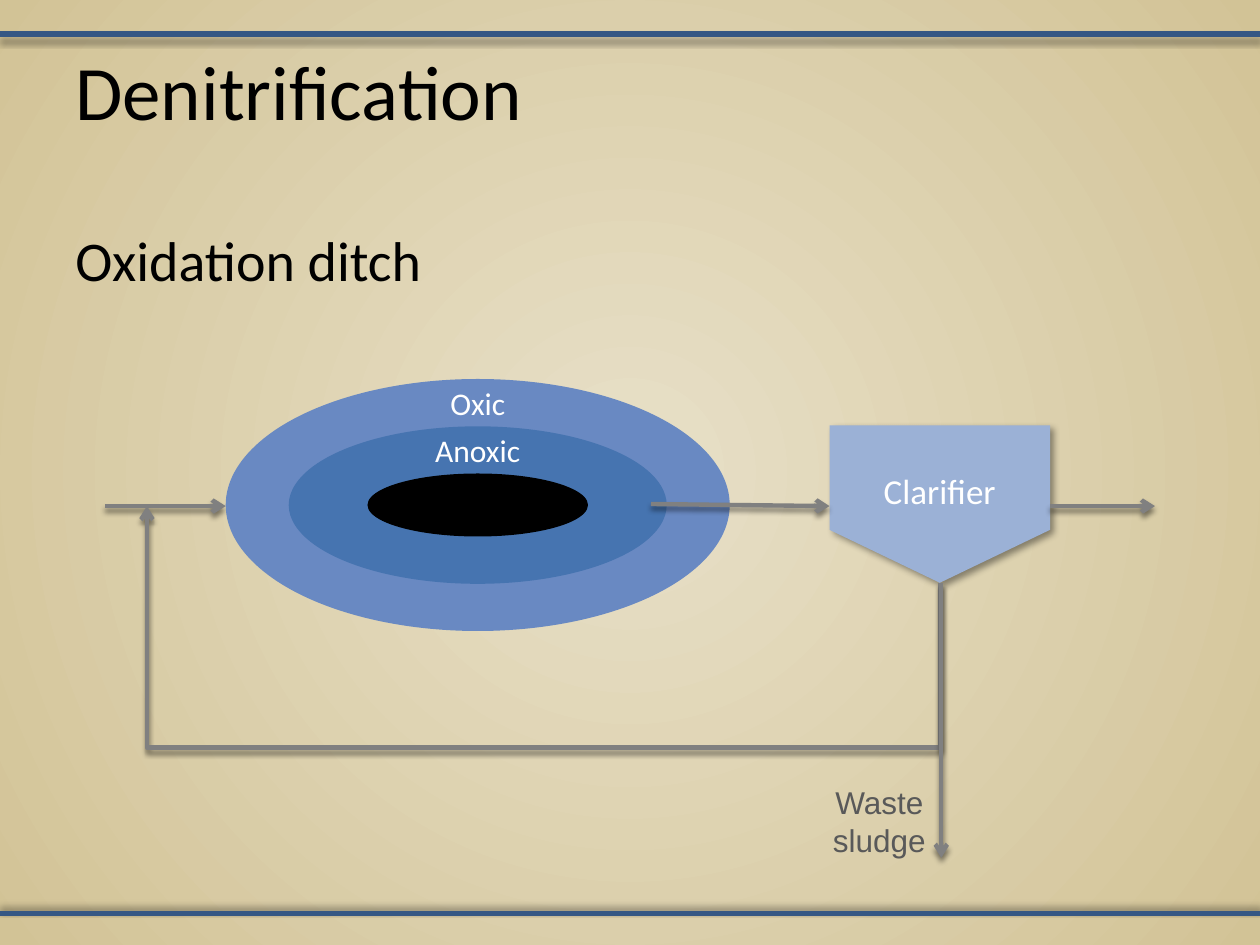
from pptx import Presentation
from pptx.dml.color import RGBColor
from pptx.enum.shapes import MSO_CONNECTOR, MSO_SHAPE
from pptx.enum.text import MSO_ANCHOR, PP_ALIGN
from pptx.oxml import parse_xml
from pptx.oxml.ns import nsdecls, qn
from pptx.util import Inches, Pt

COLS, ROWS = 120, 90
UNIT = Inches(10) / COLS
COLORS = {
    "glow": "E8E0C8", "sand": "D2C396", "rule": "355784", "pipe": "808080",
    "oxic": "6989C2", "anoxic": "4674B0", "core": "000000", "clarifier": "9BB1D6",
    "ink": "000000", "note": "595959", "light": "FFFFFF", "shade": "000000",
}
STRAIGHT, ELBOW = MSO_CONNECTOR.STRAIGHT, MSO_CONNECTOR.ELBOW
OVAL, PENTAGON = MSO_SHAPE.OVAL, MSO_SHAPE.PENTAGON
LEFT, CENTER, MIDDLE = PP_ALIGN.LEFT, PP_ALIGN.CENTER, MSO_ANCHOR.MIDDLE


def grid(*cells):
    """Turn grid cells into slide lengths."""
    return [round(cell * UNIT) for cell in cells]


def color(name):
    """Look up a named colour."""
    return RGBColor.from_string(COLORS[name])


def add_shadow(item, alpha, blur, distance, angle):
    """Give a shape or line a soft outer shadow."""
    props = item._element.spPr
    for old in props.findall(qn("a:effectLst")):
        props.remove(old)
    props.append(parse_xml(
        f'<a:effectLst {nsdecls("a")}><a:outerShdw blurRad="{Pt(blur)}" dist="{Pt(distance)}" '
        f'dir="{angle * 60000}" algn="ctr" rotWithShape="0"><a:srgbClr val="{COLORS["shade"]}">'
        f'<a:alpha val="{alpha * 1000}"/></a:srgbClr></a:outerShdw></a:effectLst>'))


def write(frame, text, size, name, font="Calibri", align=CENTER):
    """Fill a text frame and format all its runs."""
    frame.word_wrap = True
    frame.text = text
    for para in frame.paragraphs:
        para.alignment = align
        for span in para.runs:
            span.font.size, span.font.name = Pt(size), font
            span.font.color.rgb = color(name)


def add_text(page, box, *style, **options):
    """Place a text box on the grid."""
    frame = page.shapes.add_textbox(*grid(*box)).text_frame
    write(frame, *style, **options)
    return frame


def add_solid(page, kind, box, fill):
    """Place an unlined shape on the grid."""
    shape = page.shapes.add_shape(kind, *grid(*box))
    shape.shadow.inherit = False
    shape.fill.solid()
    shape.fill.fore_color.rgb = color(fill)
    shape.line.fill.background()
    return shape


def add_pipe(page, start, end, kind=STRAIGHT):
    """Draw a flow arrow between two grid points."""
    pipe = page.shapes.add_connector(kind, *grid(*start, *end))
    pipe.line.color.rgb = color("pipe")
    pipe.line.width = Pt(2.5)
    pipe.line._get_or_add_ln().append(parse_xml(f'<a:tailEnd {nsdecls("a")} type="arrow"/>'))
    add_shadow(pipe, 45, 3, 2.4, 90)
    return pipe


def add_return_pipe(page, start, end, floor):
    """Draw the sludge return, dropping to the floor row and rising to its end."""
    rise, run = start[1] - end[1], start[0] - end[0]
    mid_x, mid_y = (start[0] + end[0]) / 2, (start[1] + end[1]) / 2
    pipe = add_pipe(page, (mid_x + rise / 2, mid_y - run / 2),
                    (mid_x - rise / 2, mid_y + run / 2), ELBOW)
    props = pipe._element.spPr
    props.find(qn("a:xfrm")).set("rot", str(90 * 60000))
    geometry = props.find(qn("a:prstGeom"))
    for old in geometry.findall(qn("a:avLst")):
        geometry.remove(old)
    bend = round((start[1] - floor) / rise * 100000)
    geometry.append(parse_xml(
        f'<a:avLst {nsdecls("a")}><a:gd name="adj1" fmla="val {bend}"/></a:avLst>'))


def add_backdrop(page):
    """Paint the radial background and the two edge rules."""
    fill = page.background.fill
    fill.gradient()
    for stop, name in zip(fill.gradient_stops, ("glow", "sand")):
        stop.color.rgb = color(name)
    gradient = page._element.find(".//" + qn("a:gradFill"))
    gradient.replace(gradient.find(qn("a:lin")), parse_xml(
        f'<a:path {nsdecls("a")} path="circle">'
        '<a:fillToRect l="50000" t="50000" r="50000" b="50000"/></a:path>'))
    for row, angle in ((3.25, 90), (87, 270)):
        rule = page.shapes.add_connector(STRAIGHT, *grid(0, row, COLS, row))
        rule.line.color.rgb = color("rule")
        rule.line.width = Pt(3)
        add_shadow(rule, 40, 4, 3, angle)


def add_headings(page, box):
    """Write the title and the subtitle in the heading area."""
    left, top, width, height = box
    add_text(page, (left, top, width, height * 0.53), "Denitrification", 44, "ink", align=LEFT)
    add_text(page, (left, top + height * 0.61, width, height * 0.39),
             "Oxidation ditch", 32, "ink", align=LEFT)


def add_clarifier(page, box):
    """Draw the downward-pointing clarifier tank."""
    left, top, width, height = box
    shift = (width - height) / 2
    tank = add_solid(page, PENTAGON, (left + shift, top - shift, height, width), "clarifier")
    tank.rotation = 90
    tank.adjustments[0] = 0.336
    add_shadow(tank, 40, 4, 3, 45)
    write(tank.text_frame, "Clarifier", 20, "light")
    tank.text_frame.vertical_anchor = MIDDLE
    tank.text_frame._txBody.bodyPr.set("vert", "vert270")


def add_ditch(page, box):
    """Draw the concentric ditch zones with their labels."""
    left, top, width, height = box
    zones = (("oxic", 1, 1, "Oxic", 10), ("anoxic", 0.75, 0.625, "Anoxic", 12),
             ("core", 0.4375, 0.25, None, 0))
    for name, across, down, label, label_width in zones:
        zone_top = top + height * (1 - down) / 2
        add_solid(page, OVAL, (left + width * (1 - across) / 2, zone_top,
                               width * across, height * down), name)
        if label:
            add_text(page, (left + (width - label_width) / 2, zone_top - 0.15, label_width, 4.8),
                     label, 18, "light")


def add_process(page, box):
    """Lay out the ditch, the clarifier and the flows between them."""
    left, top, width, height = box
    right, bottom = left + width, top + height
    flow = top + 12.1
    tank = (79, top + 4.4, 21, 15)
    outlet, tip = tank[0] + tank[2] / 2, tank[1] + tank[3]
    add_clarifier(page, tank)
    add_pipe(page, (left, flow), (21.5, flow))
    add_pipe(page, (tank[0] + tank[2], flow), (right, flow))
    add_return_pipe(page, (outlet, tip), (left + 4, flow), 71.2)
    note = add_text(page, (77, bottom - 7.7, 13.5, 8.5), "Waste\nsludge", 18, "note", font="Arial")
    note.margin_left = note.margin_right = Inches(0.01)
    add_ditch(page, (21.5, top, 48, 24))
    add_pipe(page, (62, flow - 0.2), (tank[0], flow))
    add_pipe(page, (outlet + 0.15, tip), (outlet + 0.15, bottom))


def main():
    """Build and save the slide."""
    deck = Presentation()
    deck.slide_width, deck.slide_height = grid(COLS, ROWS)
    page = deck.slides.add_slide(deck.slide_layouts[6])
    add_backdrop(page)
    add_headings(page, (6, 3.6, 108, 28.4))
    add_process(page, (10, 36.1, 100, 45.6))
    deck.save("out.pptx")


if __name__ == "__main__":
    main()
